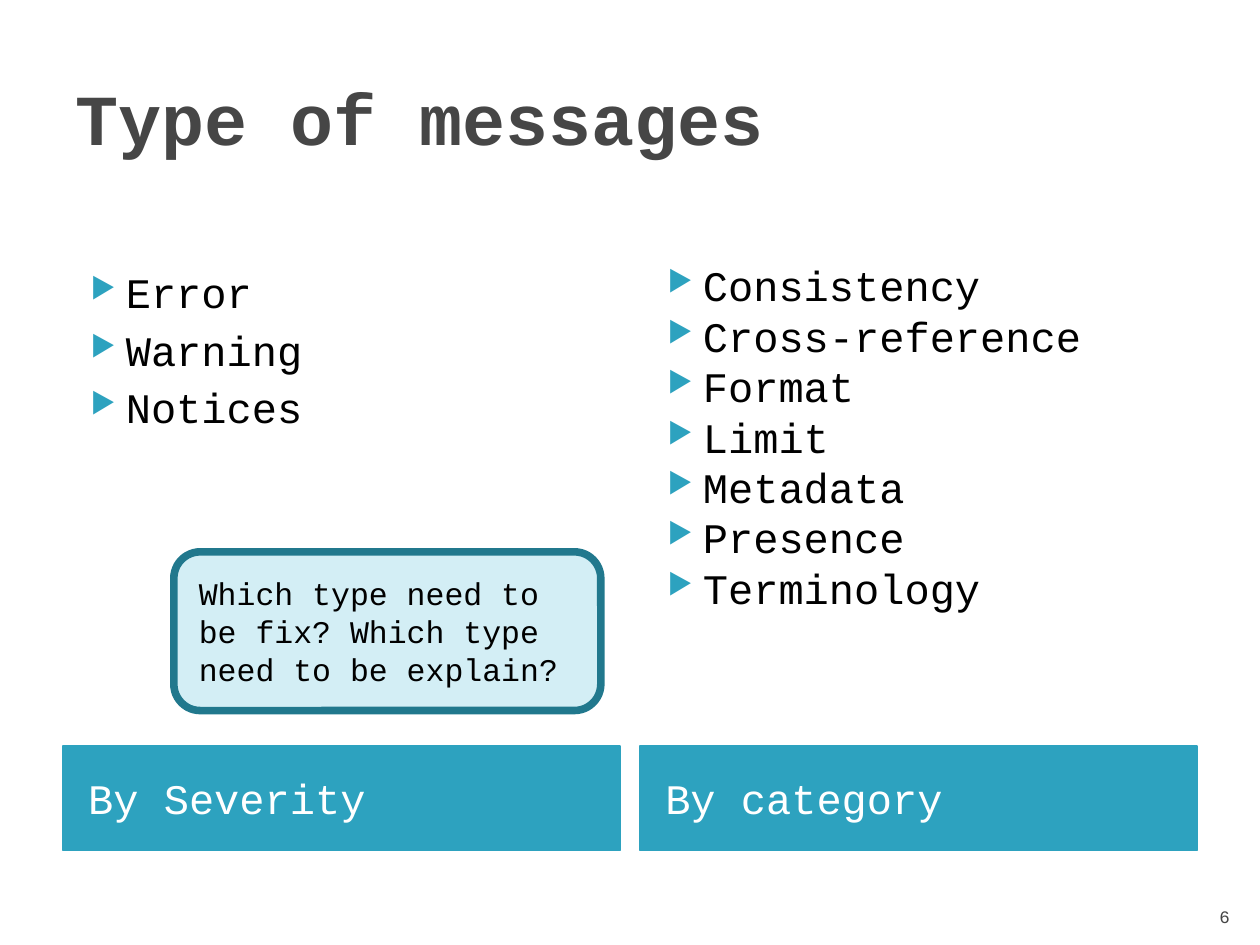
"""Build the slide on types of messages, by severity and by category."""
from lxml import etree
from pptx import Presentation
from pptx.dml.color import RGBColor
from pptx.enum.shapes import MSO_SHAPE
from pptx.enum.text import MSO_ANCHOR, PP_ALIGN
from pptx.oxml.ns import qn
from pptx.util import Pt

RECT, ROUND = MSO_SHAPE.RECTANGLE, MSO_SHAPE.ROUNDED_RECTANGLE
TOP, MID, LOW = MSO_ANCHOR.TOP, MSO_ANCHOR.MIDDLE, MSO_ANCHOR.BOTTOM
LEFT, RIGHT = PP_ALIGN.LEFT, PP_ALIGN.RIGHT

TEAL = RGBColor(0x2D, 0xA2, 0xBF)
DEEP = RGBColor(0x21, 0x78, 0x8D)
PALE = RGBColor(0xD3, 0xEE, 0xF5)
GRAY = RGBColor(0x46, 0x46, 0x46)
WHITE = RGBColor(0xFF, 0xFF, 0xFF)
BLACK = RGBColor(0, 0, 0)
FONT = "Courier New"

TITLE = "Type of messages"
GROUPS = [
    {"head": "By Severity", "top": 149, "gap": 4,
     "items": ["Error", "Warning", "Notices"]},
    {"head": "By category", "top": 145, "gap": 0,
     "items": ["Consistency", "Cross-reference", "Format", "Limit",
               "Metadata", "Presence", "Terminology"]},
]
NOTE = "Which type need to be fix? Which type need to be explain?"
PAGE = "6"

EDGE, WIDE, STEP = 36, 318.24, 329.76
BAND, TALL, FLOOR = 426.24, 59.76, 424
PITCH, DENT, HANG = 28.8, 28.8, 20.16
BULLET = [("buClr", None), ("buSzPct", "68000"), ("buChar", "▶")]


def add_bullet(para):
    props = para._p.get_or_add_pPr()
    props.set("marL", str(Pt(DENT)))
    props.set("indent", str(-Pt(HANG)))
    for tag, val in BULLET:
        node = etree.SubElement(props, qn("a:" + tag))
        if tag == "buClr":
            etree.SubElement(node, qn("a:srgbClr")).set("val", str(TEAL))
        else:
            node.set("char" if tag == "buChar" else "val", val)


def write(shape, lines, size, color, anchor=TOP, align=LEFT, bold=False,
          inset=7.2, gap=None):
    frame = shape.text_frame
    frame.word_wrap = True
    frame.vertical_anchor = anchor
    frame.margin_left = Pt(inset)
    style = {"name": FONT, "size": Pt(size), "bold": bold}
    for i, line in enumerate(lines):
        para = frame.add_paragraph() if i else frame.paragraphs[0]
        para.alignment = align
        if gap is not None:
            add_bullet(para)
            para.line_spacing = Pt(PITCH)
            para.space_before = Pt(gap if i else 0)
        run = para.add_run()
        run.text = line
        for key, val in style.items():
            setattr(run.font, key, val)
        run.font.color.rgb = color


def add_text(slide, box, lines, *args, **fmt):
    write(slide.shapes.add_textbox(*map(Pt, box)), lines, *args, **fmt)


def add_block(slide, kind, box, fill, line, width):
    shape = slide.shapes.add_shape(kind, *map(Pt, box))
    shape.shadow.inherit = False
    shape.fill.solid()
    shape.fill.fore_color.rgb = fill
    shape.line.color.rgb = line
    shape.line.width = Pt(width)
    return shape


def main():
    deck = Presentation()
    deck.slide_width, deck.slide_height = Pt(720), Pt(540)
    slide = deck.slides.add_slide(deck.slide_layouts[6])
    add_text(slide, (EDGE, 21.6, 648, 90), [TITLE], 41, GRAY, MID, bold=True)
    for i, group in enumerate(GROUPS):
        left, top = EDGE + i * STEP, group["top"]
        band = add_block(slide, RECT, (left, BAND, WIDE, TALL),
                         TEAL, TEAL, 0.75)
        write(band, [group["head"]], 24, WHITE, MID, inset=14.4)
        add_text(slide, (left, top, WIDE, FLOOR - top), group["items"],
                 24, BLACK, gap=group["gap"])
    add_text(slide, (681, 504.5, 28.8, 28.8), [PAGE], 10, GRAY, LOW, RIGHT)
    add_block(slide, ROUND, (99.36, 315.36, 244, 90.72), PALE, DEEP, 4.33)
    add_text(slide, (106.56, 324.72, 232.56, 72.72), [NOTE], 18, BLACK)
    deck.save("out.pptx")


if __name__ == "__main__":
    main()
